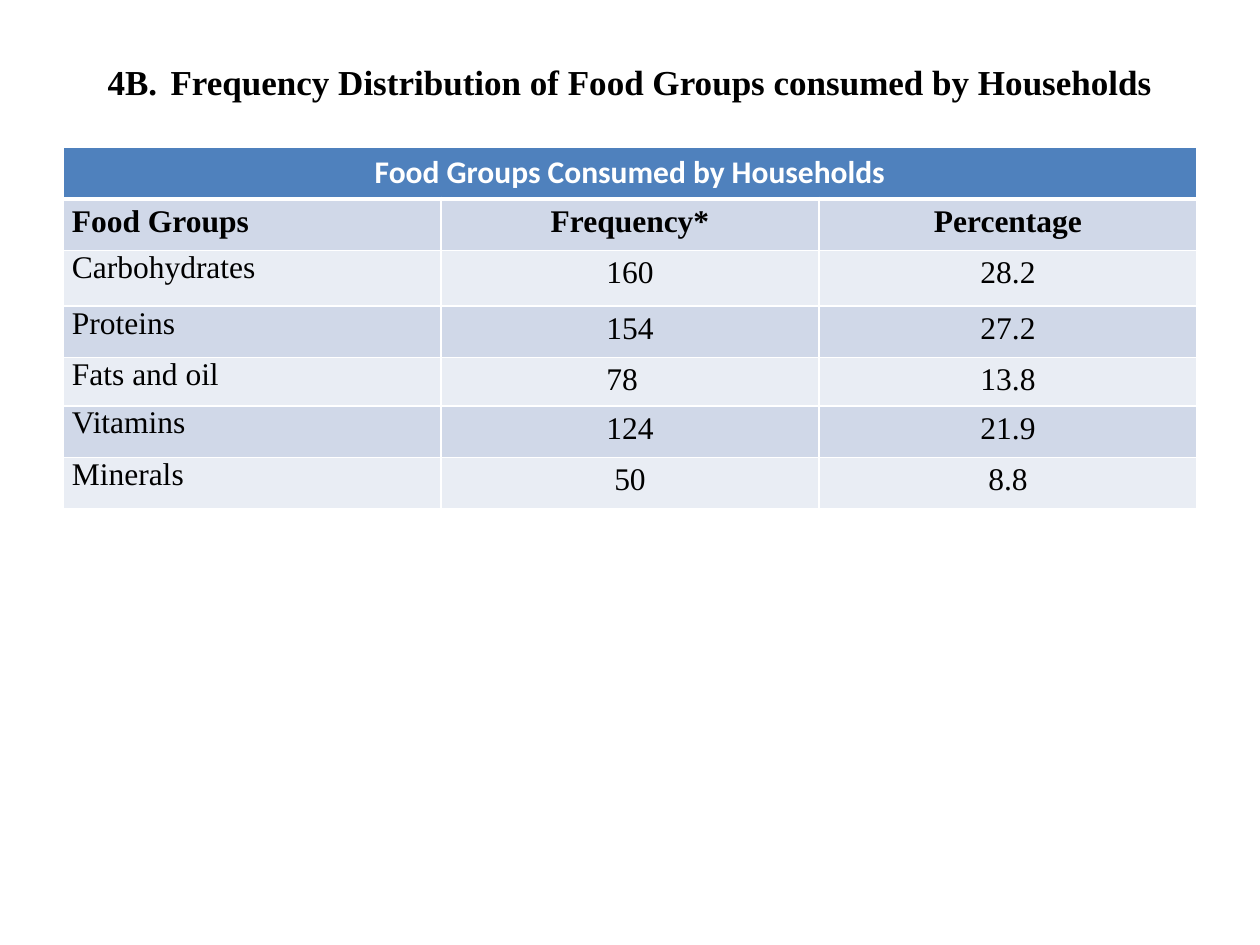
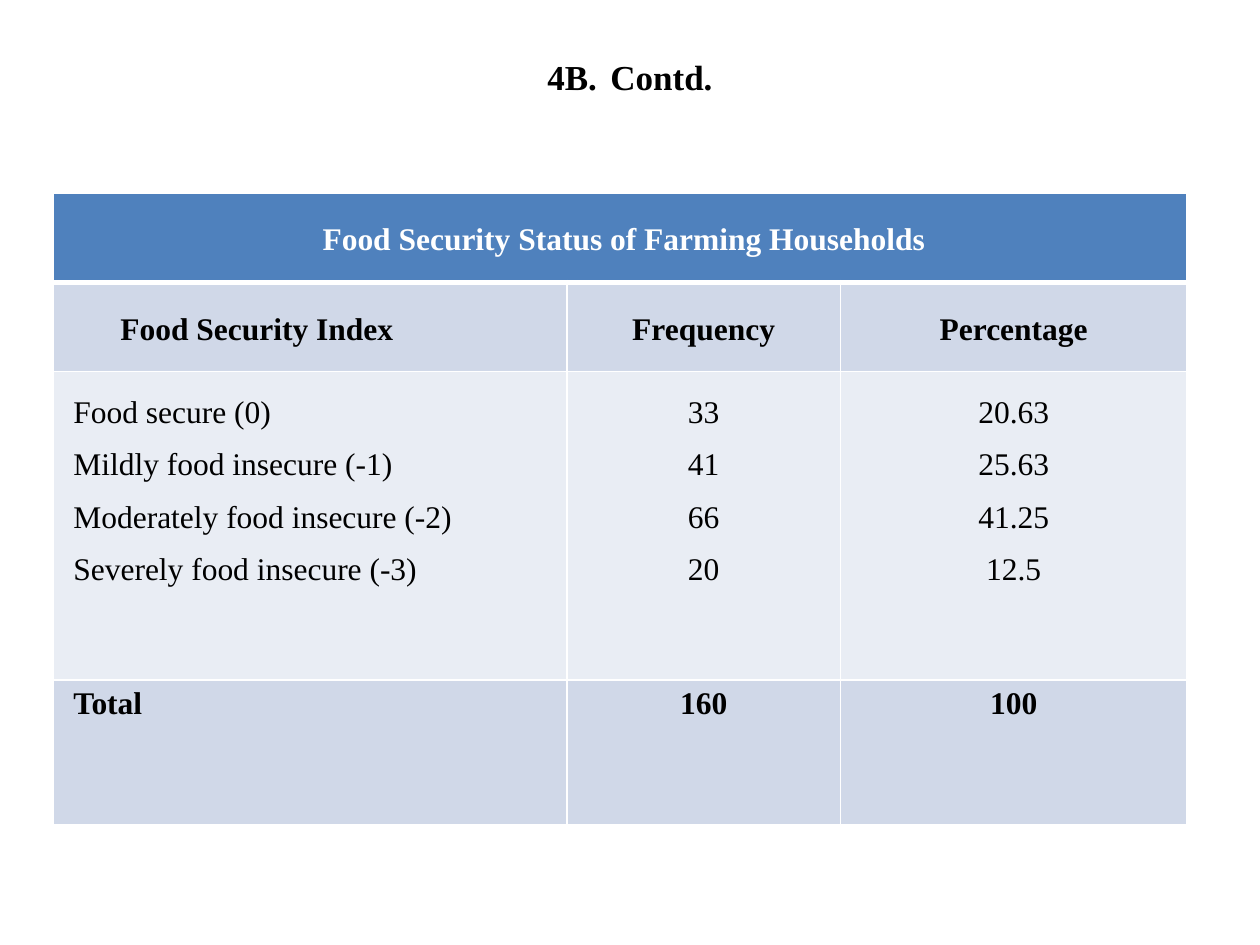
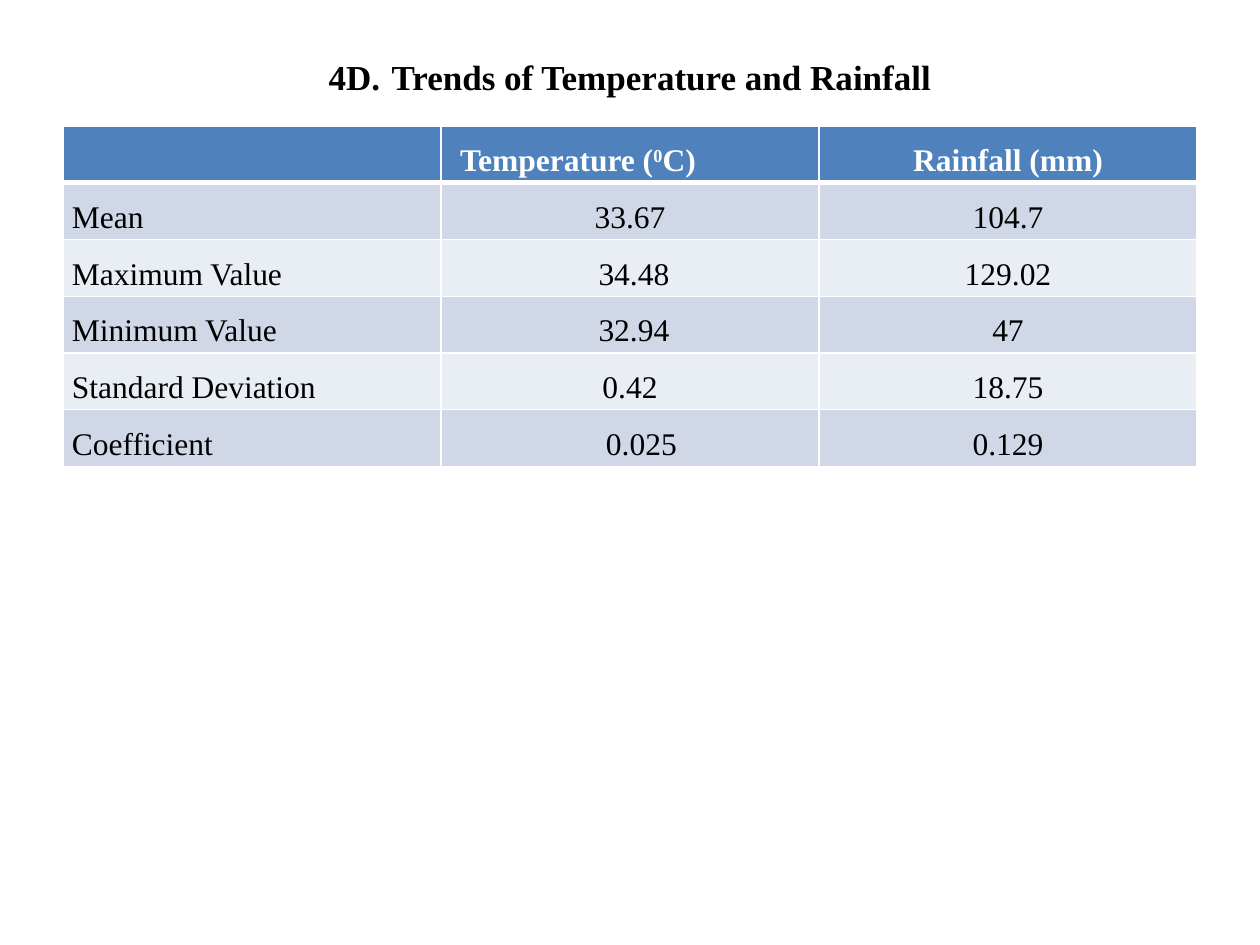
from dataclasses import dataclass

from lxml import etree
from pptx import Presentation
from pptx import util as u
from pptx.dml.color import RGBColor
from pptx.enum import text
from pptx.oxml import ns


@dataclass(frozen=True)
class Theme:
    """Colours, fonts and sizes shared by all slides."""
    header: str = "4F81BD"
    bands: tuple = ("E9EDF4", "D0D8E8")
    ink: str = "000000"
    paper: str = "FFFFFF"
    serif: str = "Times New Roman"
    sans: str = "Calibri"
    title_size: int = 20
    body_size: int = 18
    thin: int = 1
    heavy: int = 3


@dataclass(frozen=True)
class Row:
    """One table row; a nudge adds a left margin, or a right one if negative."""
    cells: tuple
    height: float = 1.04
    bold: bool = False
    centred: bool = False
    spacing: float = 1.15
    label_spacing: float = 1.15
    roomy: bool = False
    middle: bool = False
    font: str = Theme.serif
    nudges: tuple = (0, 0, 0)


def write(frame, content, *, size, color, font, bold=False, centred=True, spacing=1.0):
    """Fill a text frame, one paragraph per line, raising parts between carets."""
    for number, line in enumerate(content.split("\n")):
        para = frame.paragraphs[0] if number == 0 else frame.add_paragraph()
        para.alignment = text.PP_ALIGN.CENTER if centred else text.PP_ALIGN.LEFT
        para.line_spacing = spacing
        for part, piece in enumerate(line.split("^")):
            span = para.add_run()
            span.text = piece
            span.font.size = u.Pt(size)
            span.font.name = font
            span.font.bold = bold
            span.font.color.rgb = RGBColor.from_string(color)
            if part % 2:
                span.font._element.set("baseline", "30000")


class Report:
    """Holds the theme and the current slide, and draws elements on it."""

    def __init__(self, theme):
        """Open an empty 4:3 deck."""
        self.theme = theme
        self.deck = Presentation()
        self.deck.slide_width, self.deck.slide_height = u.Cm(25.4), u.Cm(19.05)
        self.page = None

    def add_page(self, title, title_height=1.57):
        """Start a slide with its centred title."""
        self.page = self.deck.slides.add_slide(self.deck.slide_layouts[6])
        box = self.page.shapes.add_textbox(u.Cm(1.27), u.Cm(0.76), u.Cm(22.86), u.Cm(title_height))
        frame = box.text_frame
        frame.word_wrap = True
        frame.margin_left = frame.margin_right = 0
        frame.vertical_anchor = text.MSO_ANCHOR.MIDDLE
        write(frame, title, size=self.theme.title_size, color=self.theme.ink,
              font=self.theme.serif, bold=True)

    def add_table(self, left, top, widths, rows, merged_header=False):
        """Draw a table with a coloured header and banded rows."""
        height = sum(row.height for row in rows)
        table = self.page.shapes.add_table(len(rows), len(widths), u.Cm(left), u.Cm(top),
                                           u.Cm(sum(widths)), u.Cm(height)).table
        for column, width in zip(table.columns, widths):
            column.width = u.Cm(width)
        for index, row in enumerate(rows):
            table.rows[index].height = u.Cm(row.height)
            for position in range(len(widths)):
                self.style_cell(table.cell(index, position), row, index, position)
        if merged_header:
            table.cell(0, 0).merge(table.cell(0, len(widths) - 1))

    def style_cell(self, cell, row, index, position):
        """Set the margins, fill, borders and text of one cell."""
        theme = self.theme
        side, edge = (0.25, 0.13) if row.roomy else (0.18, 0)
        nudge = row.nudges[position]
        cell.margin_left = u.Cm(side + max(nudge, 0))
        cell.margin_right = u.Cm(side + max(-nudge, 0))
        cell.margin_top = cell.margin_bottom = u.Cm(edge)
        cell.vertical_anchor = text.MSO_ANCHOR.MIDDLE if row.middle else text.MSO_ANCHOR.TOP
        cell.fill.solid()
        cell.fill.fore_color.rgb = RGBColor.from_string(theme.bands[index % 2] if index else theme.header)
        self.add_borders(cell, top=theme.heavy if index == 1 else theme.thin,
                         bottom=theme.thin if index else theme.heavy)
        if position < len(row.cells) and row.cells[position]:
            write(cell.text_frame, row.cells[position], size=theme.body_size,
                  color=theme.ink if index else theme.paper, font=row.font, bold=row.bold,
                  centred=row.centred or position > 0,
                  spacing=row.spacing if position else row.label_spacing)

    def add_borders(self, cell, top, bottom):
        """Give a cell four lines in the paper colour."""
        properties = cell._tc.get_or_add_tcPr()
        sides = {"lnL": self.theme.thin, "lnR": self.theme.thin, "lnT": top, "lnB": bottom}
        for order, (tag, width) in enumerate(sides.items()):
            line = etree.Element(ns.qn(f"a:{tag}"), w=str(u.Pt(width)))
            fill = etree.SubElement(line, ns.qn("a:solidFill"))
            etree.SubElement(fill, ns.qn("a:srgbClr"), val=self.theme.paper)
            properties.insert(order, line)


def food_groups(report):
    """Build the slide on food groups."""
    report.add_page("4B.\tFrequency Distribution of Food Groups consumed by Households", 1.78)
    groups = [
        ("Carbohydrates", "160", "28.2", 1.12, 0),
        ("Proteins", "154", "27.2", 1.04, 0),
        ("Fats and oil", "78", "13.8", 0.97, -0.32),
        ("Vitamins", "124", "21.9", 1.04, 0),
        ("Minerals", "50", "8.8", 1.04, 0),
    ]
    rows = [
        Row(("Food Groups Consumed by Households",), bold=True, centred=True, roomy=True,
            label_spacing=1.0, font=report.theme.sans),
        Row(("Food Groups", "Frequency*", "Percentage"), bold=True),
    ]
    rows += [Row((group, frequency, percentage), height, label_spacing=1.0, nudges=(0, nudge, 0))
             for group, frequency, percentage, height, nudge in groups]
    report.add_table(1.27, 2.97, [7.62] * 3, rows, merged_header=True)


def food_security(report):
    """Build the slide on food security."""
    report.add_page("4B.\tContd.")
    levels = [
        ("Food secure (0)", "33", "20.63"),
        ("Mildly food insecure (-1)", "41", "25.63"),
        ("Moderately food insecure (-2)", "66", "41.25"),
        ("Severely food insecure (-3)", "20", "12.5"),
    ]
    heading = dict(height=1.8, bold=True, centred=True, middle=True)
    rows = [
        Row(("Food Security Status of Farming Households",), nudges=(0.16, 0, 0), **heading),
        Row(("Food Security Index", "Frequency", "Percentage"), nudges=(-2.14, 0, 0), **heading),
        Row(tuple("\n".join(column) for column in zip(*levels)), 6.22, spacing=1.5,
            label_spacing=1.5, roomy=True, nudges=(0.16, 0, 0)),
        Row(("Total", "160", "100"), 2.92, bold=True, spacing=1.0, label_spacing=1.0,
            roomy=True, nudges=(0.16, 0, 0)),
    ]
    report.add_table(1.07, 3.89, [10.36, 5.51, 6.99], rows, merged_header=True)


def climate_trends(report):
    """Build the slide on temperature and rainfall."""
    report.add_page("4D.\tTrends of Temperature and Rainfall")
    measures = [
        ("Mean", "33.67", "104.7", 0),
        ("Maximum Value", "34.48", "129.02", 0.16),
        ("Minimum Value", "32.94", "47", 0.16),
        ("Standard Deviation", "0.42", "18.75", 0),
        ("Coefficient", "0.025", "0.129", 0.46),
    ]
    wide = dict(spacing=1.5, label_spacing=1.5)
    rows = [Row(("", "Temperature (^0^C)", "Rainfall (mm)"), bold=True, nudges=(0, -2.1, 0), **wide)]
    rows += [Row((measure, temperature, rainfall), nudges=(0, nudge, 0), **wide)
             for measure, temperature, rainfall, nudge in measures]
    report.add_table(1.27, 2.54, [7.62] * 3, rows)


def main():
    """Build and save the deck."""
    report = Report(Theme())
    food_groups(report)
    food_security(report)
    climate_trends(report)
    report.deck.save("out.pptx")


if __name__ == "__main__":
    main()
